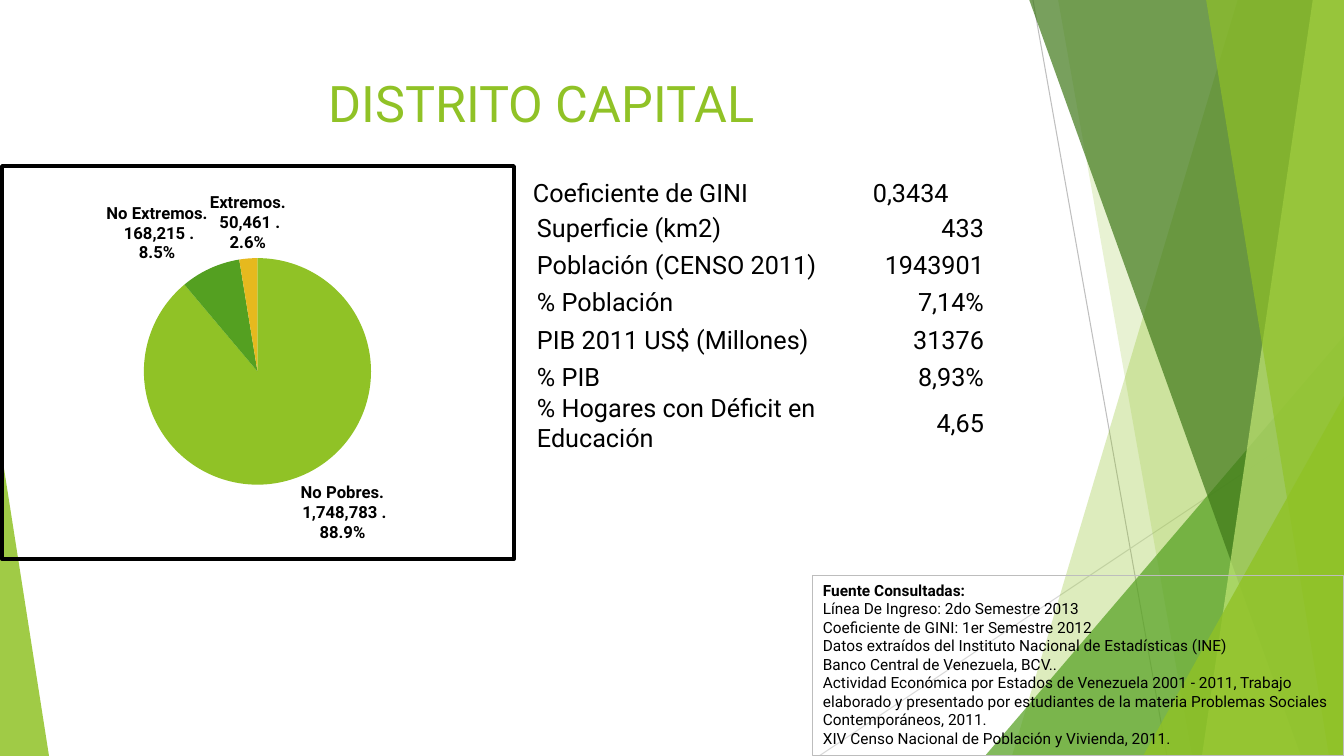
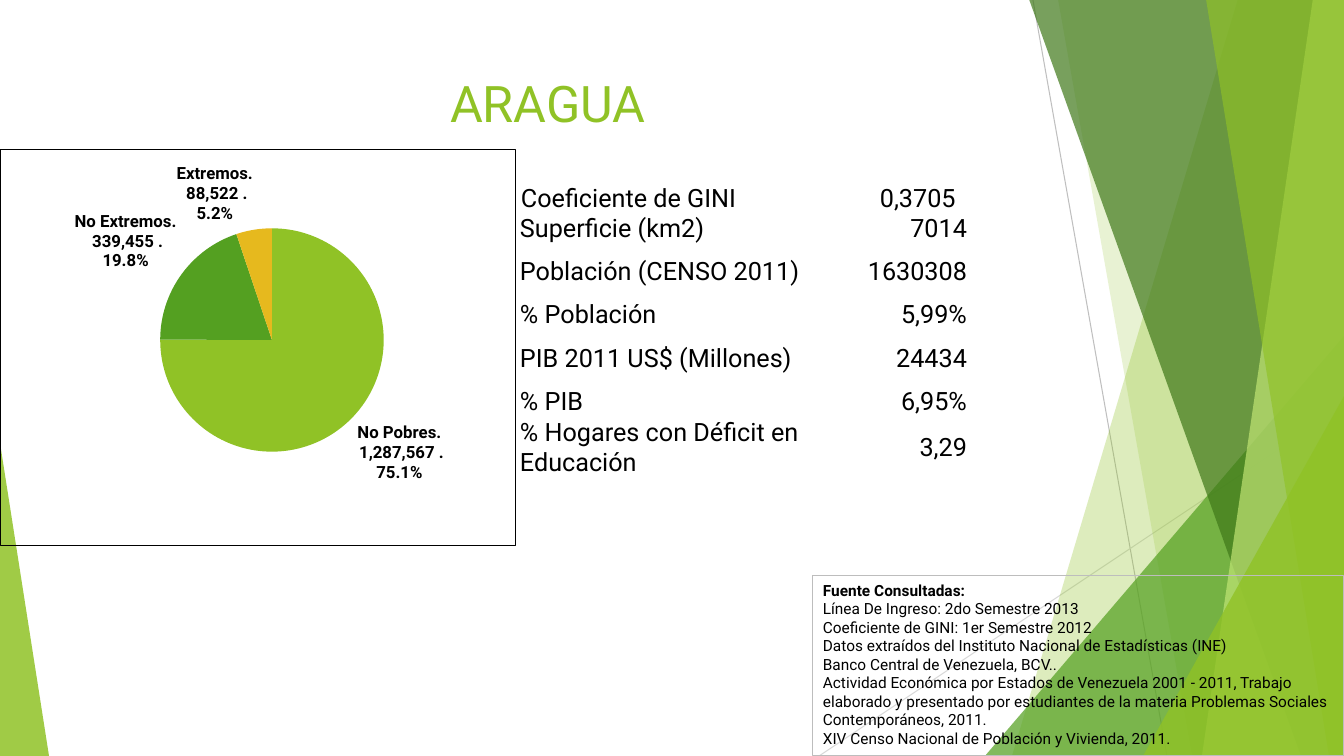
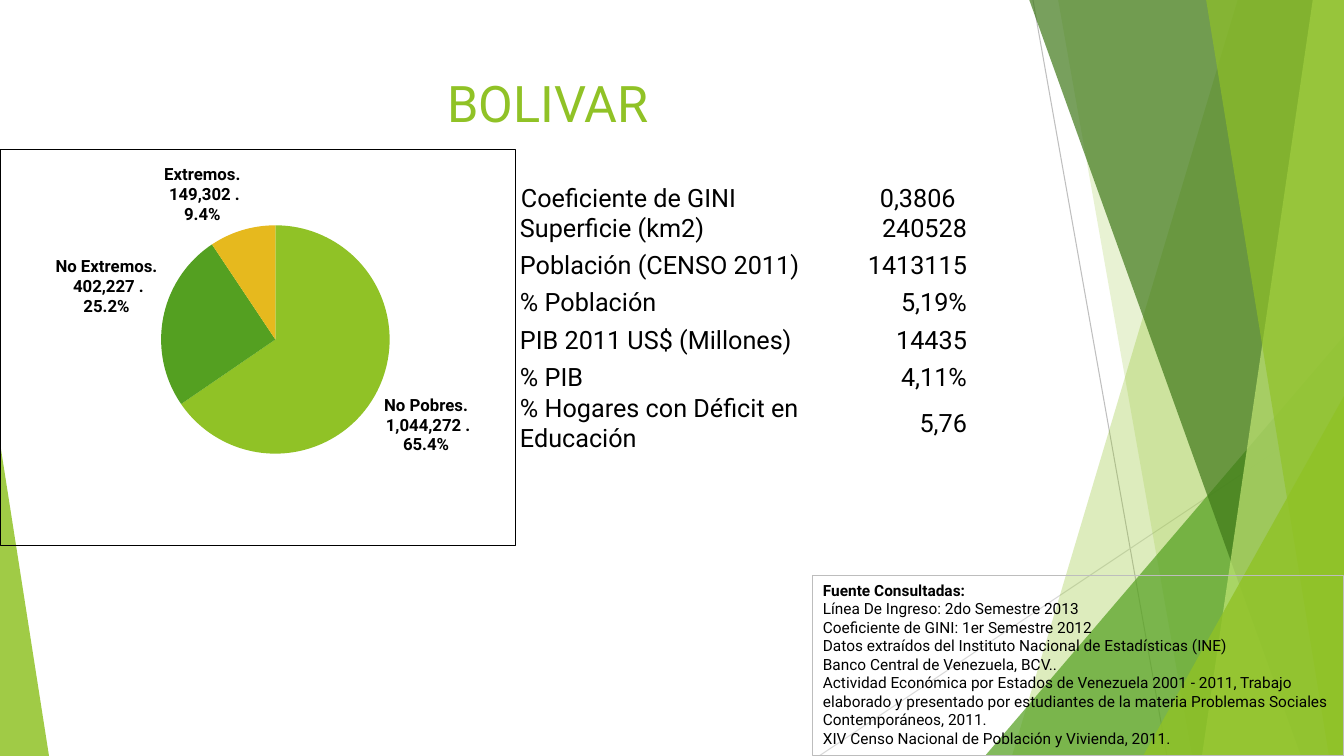
from lxml import etree
from pptx import Presentation
from pptx.chart.data import CategoryChartData
from pptx.dml.color import RGBColor
from pptx.enum.chart import XL_CHART_TYPE, XL_LABEL_POSITION
from pptx.enum.shapes import MSO_CONNECTOR, MSO_SHAPE
from pptx.enum.text import MSO_ANCHOR, PP_ALIGN
from pptx.oxml import parse_xml
from pptx.oxml.ns import nsdecls, qn
from pptx.util import Pt

W, H = 1344, 756
PX = 12192000 / W
FONT = "Roboto"

BLACK = RGBColor(0x00, 0x00, 0x00)
LIME = RGBColor(0x90, 0xC2, 0x26)
GREEN = RGBColor(0x54, 0xA0, 0x21)
GOLD = RGBColor(0xE6, 0xB9, 0x1E)
FOREST = RGBColor(0x3F, 0x78, 0x19)
PALE_LIME = RGBColor(0xC0, 0xE4, 0x74)
GREY = RGBColor(0xBF, 0xBF, 0xBF)
LIGHT_GREY = RGBColor(0xD9, 0xD9, 0xD9)
BOX_GREY = RGBColor(0xBD, 0xBD, 0xBD)

# Content
STATES = [
    dict(title="DISTRITO CAPITAL ", gini="0,3434", poverty=(1748783, 168215, 50461),
         values=("433", "1943901", "7,14%", "31376", "8,93%", "4,65"),
         chart_top=164, border=3, pie=(143, 257, 229),
         gini_box=(523, 172, 473, 40), tab=340, table_left=536, tall_row=43),
    dict(title="ARAGUA", gini="0,3705", poverty=(1287567, 339455, 88522),
         values=("7014", "1630308", "5,99%", "24434", "6,95%", "3,29"),
         chart_top=149, border=0.75, pie=(160, 228, 224),
         gini_box=(511, 177, 525, 40), tab=359, table_left=519, tall_row=55),
    dict(title="BOLIVAR", gini="0,3806", poverty=(1044272, 402227, 149302),
         values=("240528", "1413115", "5,19%", "14435", "4,11%", "5,76"),
         chart_top=149, border=0.75, pie=(161, 225, 229),
         gini_box=(511, 177, 525, 40), tab=359, table_left=519, tall_row=43),
]
INDICATORS = ("Superficie (km2)", "Población (CENSO 2011)", "% Población",
              "PIB 2011 US$ (Millones)", "% PIB", "% Hogares con Déficit en Educación")
SLICES = (("No Pobres", LIME), ("No Extremos", GREEN), ("Extremos", GOLD))
SOURCES = (
    "Fuente Consultadas:",
    "Línea De Ingreso: 2do Semestre 2013",
    "Coeficiente de GINI: 1er Semestre 2012",
    "Datos extraídos del Instituto Nacional de Estadísticas (INE)",
    "Banco Central de Venezuela, BCV..",
    "Actividad Económica por Estados de Venezuela 2001 - 2011, Trabajo elaborado y "
    "presentado por estudiantes de la materia Problemas Sociales Contemporáneos, 2011.",
    "XIV Censo Nacional de Población y Vivienda, 2011.",
)

# Background: lines, then facets from back to front
LINES = (((1033, 0, 1167, H), GREY), ((W, 406, 819, H), LIGHT_GREY))
FACETS = (  # bands: left edge at top and bottom; triangles: box and apex
    ("band", (1238, 1012), LIME, 30),
    ("band", (1058, 1192), LIME, 20),
    ("triangle", (985, 336, 359, 420, 1), GREEN, 72),
    ("band", (1029, 1301), FOREST, 70),
    ("band", (1313, 1202), PALE_LIME, 70),
    ("band", (1206, 1329), LIME, 65),
    ("triangle", (1143, 396, 201, 360, 1), LIME, 80),
    ("triangle", (0, 443, 49, 313, 0), LIME, 85),
)

CHART_W, CHART_H = 516, 397
TABLE_TOP, SHORT_ROW, COLS = 213, 22, (285, 164)


def emu(*lengths):
    return [round(n * PX) for n in lengths]


def add_run(p, text, size, color=BLACK, bold=False):
    r = p.add_run()
    r.text = text
    r.font.name, r.font.size, r.font.bold = FONT, Pt(size), bold
    r.font.color.rgb = color


def add_text(s, box, text, size, color=BLACK, align=PP_ALIGN.LEFT):
    tf = s.shapes.add_textbox(*emu(*box)).text_frame
    tf.word_wrap = True
    p = tf.paragraphs[0]
    p.alignment = align
    add_run(p, text, size, color)
    return p


def add_background(s):
    for ends, color in LINES:
        line = s.shapes.add_connector(MSO_CONNECTOR.STRAIGHT, *emu(*ends))
        line.line.color.rgb, line.line.width = color, Pt(0.75)
        etree.SubElement(line._element.spPr, qn("a:effectLst"))
    for kind, geometry, color, opacity in FACETS:
        if kind == "band":
            top, bottom = geometry
            outline = s.shapes.build_freeform(top, -1, scale=PX)
            outline.add_line_segments([(W, -1), (W, H), (bottom, H)], close=True)
            sp = outline.convert_to_shape()
        else:
            *box, apex = geometry
            sp = s.shapes.add_shape(MSO_SHAPE.ISOSCELES_TRIANGLE, *emu(*box))
            sp.adjustments[0] = apex
        sp.shadow.inherit = False
        sp.fill.solid()
        sp.fill.fore_color.rgb = color
        sp.line.fill.background()
        clr = sp._element.spPr.find(".//" + qn("a:srgbClr"))
        etree.SubElement(clr, qn("a:alpha"), val=str(opacity * 1000))


def add_gini(s, state):
    p = add_text(s, state["gini_box"], "Coeficiente de GINI\t" + state["gini"], 18)
    tabs = etree.SubElement(p._p.get_or_add_pPr(), qn("a:tabLst"))
    etree.SubElement(tabs, qn("a:tab"), pos=str(emu(state["tab"])[0]), algn="l")


def add_pie(s, state):
    data = CategoryChartData(number_format="_(* #,##0_)")
    data.categories = [name for name, _ in SLICES]
    data.add_series("Series 1", state["poverty"])
    top = state["chart_top"]
    chart = s.shapes.add_chart(XL_CHART_TYPE.PIE, *emu(0, top, CHART_W, CHART_H), data).chart
    chart.has_title = chart.has_legend = False
    chart.font.name, chart.font.size, chart.font.color.rgb = FONT, Pt(10), BLACK
    plot = chart.plots[0]
    plot.vary_by_categories = True
    series = plot.series[0]
    for i, (_, color) in enumerate(SLICES):
        fill = series.points[i].format.fill
        fill.solid()
        fill.fore_color.rgb = color

    # Labels: name, value and share, each on its own line
    labels = series.data_labels
    labels.show_category_name = labels.show_value = labels.show_percentage = True
    labels.number_format, labels.number_format_is_linked = "0.0%", False
    labels.position = XL_LABEL_POSITION.OUTSIDE_END
    labels.font.name, labels.font.size, labels.font.bold = FONT, Pt(12), True
    labels.font.color.rgb = BLACK
    labels._element.find(".//" + qn("a:bodyPr")).set("wrap", "square")
    separator = etree.Element(qn("c:separator"))
    separator.text = ".\n"
    labels._element.find(qn("c:showBubbleSize")).addnext(separator)

    # Frame of the chart and place of the pie inside it
    space = chart._chartSpace
    space.find(qn("c:chart")).addnext(parse_xml(
        f'<c:spPr {nsdecls("c", "a")}><a:noFill/><a:ln w="{Pt(state["border"])}">'
        f'<a:solidFill><a:srgbClr val="{BLACK}"/></a:solidFill></a:ln></c:spPr>'))
    pie_left, pie_top, size = state["pie"]
    area = space.find(".//" + qn("c:plotArea"))
    for old in area.findall(qn("c:layout")):
        area.remove(old)
    layout = etree.Element(qn("c:layout"))
    manual = etree.SubElement(layout, qn("c:manualLayout"))
    for tag, val in (("layoutTarget", "inner"), ("xMode", "edge"), ("yMode", "edge"),
                     ("x", pie_left / CHART_W), ("y", (pie_top - top) / CHART_H),
                     ("w", size / CHART_W), ("h", size / CHART_H)):
        text = val if isinstance(val, str) else f"{val:.4f}"
        etree.SubElement(manual, qn("c:" + tag), val=text)
    area.insert(0, layout)


def add_indicators(s, state):
    heights = [SHORT_ROW, state["tall_row"]] * (len(INDICATORS) // 2)
    box = (state["table_left"], TABLE_TOP, sum(COLS), sum(heights))
    table = s.shapes.add_table(len(INDICATORS), len(COLS), *emu(*box)).table
    table.first_row = table.horz_banding = False
    for col, width in zip(table.columns, emu(*COLS)):
        col.width = width
    for row, height, texts in zip(table.rows, emu(*heights), zip(INDICATORS, state["values"])):
        row.height = height
        for cell, text, align in zip(row.cells, texts, (PP_ALIGN.LEFT, PP_ALIGN.RIGHT)):
            cell.fill.background()
            cell.vertical_anchor = MSO_ANCHOR.MIDDLE
            cell.margin_left, cell.margin_right, cell.margin_top, cell.margin_bottom = emu(1, 1, 1, 0)
            p = cell.text_frame.paragraphs[0]
            p.alignment = align
            add_run(p, text, 18)


def add_sources(s):
    sp = s.shapes.add_shape(MSO_SHAPE.RECTANGLE, *emu(813, 576, 531, 180))
    sp.shadow.inherit = False
    sp.fill.background()
    sp.line.color.rgb, sp.line.width = BOX_GREY, Pt(0.75)
    tf = sp.text_frame
    tf.word_wrap = True
    tf.vertical_anchor = MSO_ANCHOR.TOP
    for i, text in enumerate(SOURCES):
        p = tf.add_paragraph() if i else tf.paragraphs[0]
        p.alignment = PP_ALIGN.LEFT
        add_run(p, text, 11, bold=i == 0)


def main():
    prs = Presentation()
    prs.slide_width, prs.slide_height = emu(W, H)
    for state in STATES:
        s = prs.slides.add_slide(prs.slide_layouts[6])
        add_background(s)
        add_text(s, (74, 67, 948, 145), state["title"], 36, LIME, PP_ALIGN.CENTER)
        add_gini(s, state)
        add_pie(s, state)
        add_indicators(s, state)
        add_sources(s)
    prs.save("out.pptx")


if __name__ == "__main__":
    main()
